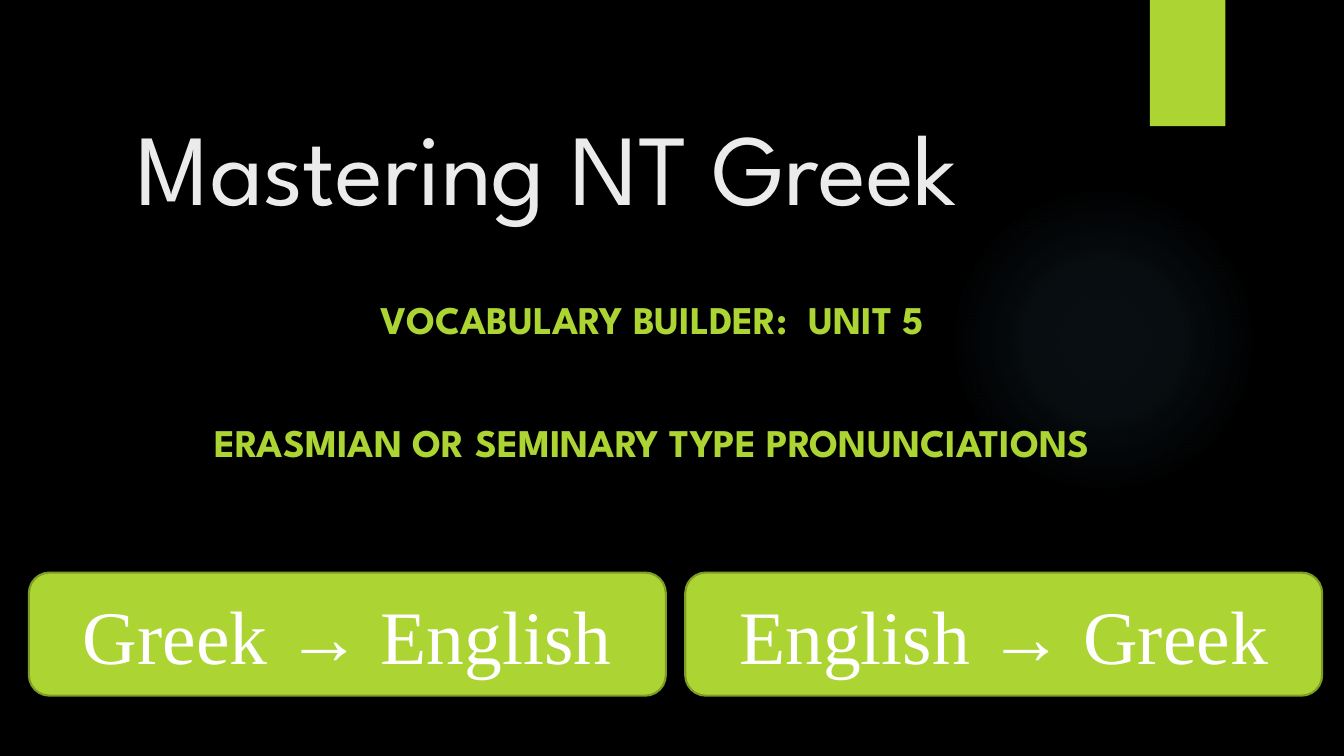
from lxml import etree
from pptx import Presentation
from pptx.dml.color import RGBColor
from pptx.enum.shapes import MSO_SHAPE as Preset
from pptx.enum.text import MSO_ANCHOR as Anchor, PP_ALIGN as Align
from pptx.oxml import parse_xml
from pptx.oxml.ns import nsdecls, qn
from pptx.util import Cm, Pt

BLACK = RGBColor(0x00, 0x00, 0x00)
LIME = RGBColor(0xAC, 0xD4, 0x33)
DARK_LIME = RGBColor(0x7F, 0x9D, 0x26)
GLOW_BLUE = RGBColor(0x7A, 0xC4, 0xF0)
OFF_WHITE = RGBColor(0xEB, 0xEB, 0xEB)
WHITE = RGBColor(0xFF, 0xFF, 0xFF)


class SlideBuilder:
    heading_font = "League Spartan"
    button_font = "Times New Roman"

    def __init__(self, presentation):
        self.slide = presentation.slides.add_slide(presentation.slide_layouts[6])
        background = self.slide.background.fill
        background.solid()
        background.fore_color.rgb = BLACK

    def block(self, preset, left, top, width, height, outline=None):
        shape = self.slide.shapes.add_shape(
            preset, Cm(left), Cm(top), Cm(width), Cm(height))
        shape.shadow.inherit = False
        shape.fill.solid()
        shape.fill.fore_color.rgb = LIME
        if outline is None:
            shape.line.fill.background()
        else:
            shape.line.color.rgb = outline
            shape.line.width = Pt(1.5)
        return shape

    def glow(self, left, top, diameter, stops):
        """Draw a circle fading outwards; stops are (position, opacity) in percent."""
        shape = self.block(Preset.OVAL, left, top, diameter, diameter)
        gradient = parse_xml(
            f'<a:gradFill {nsdecls("a")} rotWithShape="1"><a:gsLst/>'
            '<a:path path="circle">'
            '<a:fillToRect l="50000" t="50000" r="50000" b="50000"/>'
            '</a:path></a:gradFill>')
        for position, opacity in stops:
            stop = etree.SubElement(gradient[0], qn("a:gs"), pos=str(position * 1000))
            color = etree.SubElement(stop, qn("a:srgbClr"), val=str(GLOW_BLUE))
            etree.SubElement(color, qn("a:alpha"), val=str(opacity * 1000))
        properties = shape._element.spPr
        properties.replace(properties.find(qn("a:solidFill")), gradient)

    def text(self, left, top, width, height, lines, size, color,
             bold=False, align=Align.LEFT, anchor=Anchor.TOP, gap=0):
        box = self.slide.shapes.add_textbox(
            Cm(left), Cm(top), Cm(width), Cm(height))
        frame = box.text_frame
        frame.word_wrap = True
        frame.vertical_anchor = anchor
        frame.text = "\n".join(lines)
        for index, paragraph in enumerate(frame.paragraphs):
            if index:
                paragraph.space_before = Pt(gap)
            self.style(paragraph, self.heading_font, size, color, align, bold)

    def button(self, left, top, width, height, label):
        shape = self.block(Preset.ROUNDED_RECTANGLE, left, top, width, height, DARK_LIME)
        frame = shape.text_frame
        frame.vertical_anchor = Anchor.MIDDLE
        frame.text = label
        self.style(frame.paragraphs[0], self.button_font, 54, WHITE, Align.CENTER)

    @staticmethod
    def style(paragraph, font_name, size, color, align, bold=False):
        paragraph.alignment = align
        font = paragraph.font
        font.name = font_name
        font.size = Pt(size)
        font.bold = bold
        font.color.rgb = color


def main():
    presentation = Presentation()
    presentation.slide_width = Cm(33.87)
    presentation.slide_height = Cm(19.05)

    builder = SlideBuilder(presentation)
    builder.glow(23.9, 4.65, 7.82, [(0, 7), (36, 6), (69, 0)])
    builder.block(Preset.RECTANGLE, 28.98, 0, 1.9, 3.18)
    builder.text(3.2, 1.78, 25.5, 4.04, ["Mastering NT Greek"], 72, OFF_WHITE,
                 anchor=Anchor.BOTTOM)
    builder.text(1.98, 7.32, 28.91, 6.83,
                 ["VOCABULARY BUILDER:  UNIT 5",
                  "ERASMIAN OR SEMINARY TYPE PRONUNCIATIONS"],
                 28, LIME, bold=True, align=Align.CENTER, gap=54)
    for column, label in enumerate(["Greek → English", "English → Greek"]):
        builder.button(0.73 + column * 16.54, 14.43, 16.05, 3.1, label)

    presentation.save("out.pptx")


if __name__ == "__main__":
    main()
